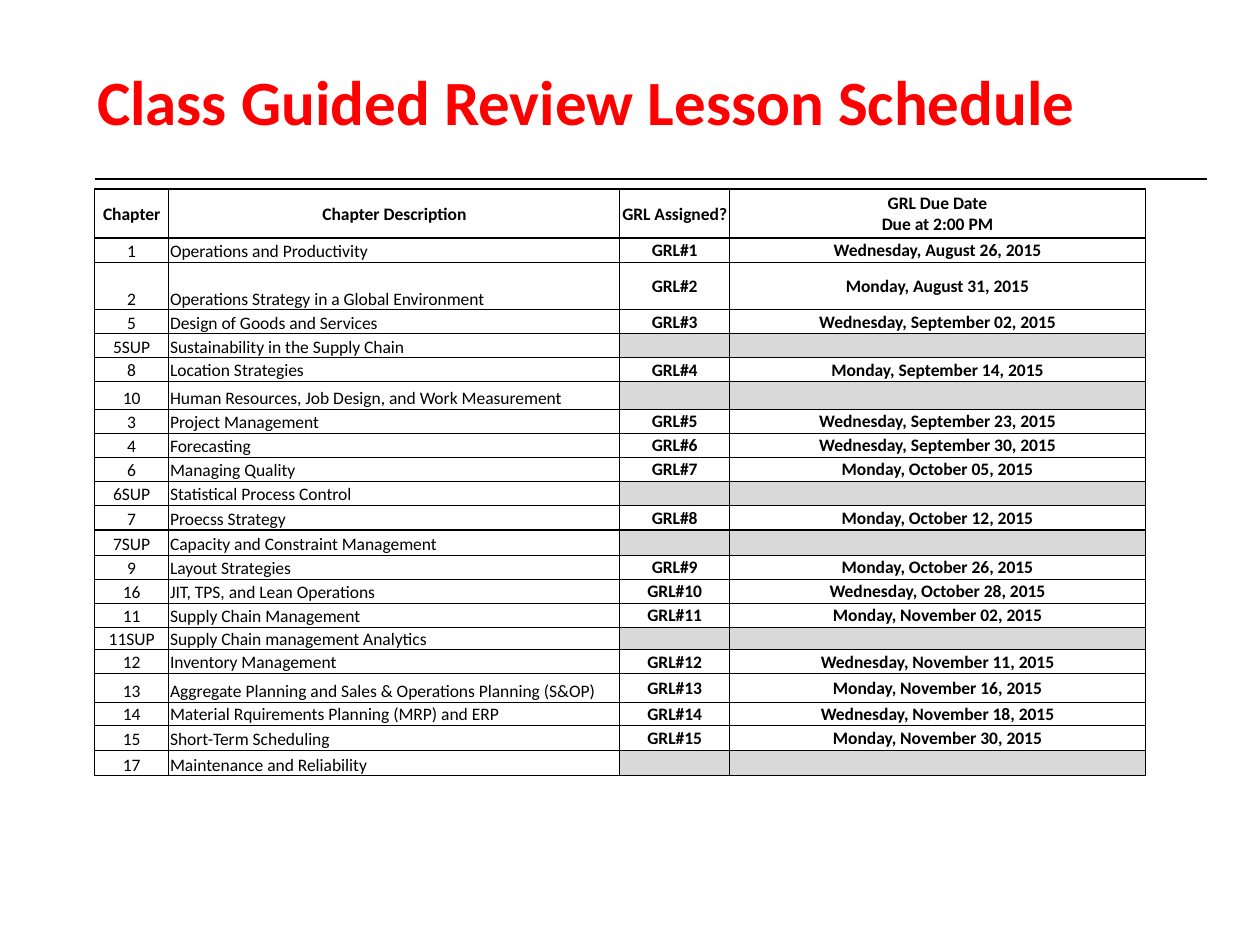
from lxml.etree import SubElement
from pptx import Presentation
from pptx.dml.color import RGBColor
from pptx.enum.shapes import MSO_CONNECTOR
from pptx.enum.text import MSO_ANCHOR, MSO_AUTO_SIZE, PP_ALIGN
from pptx.oxml import parse_xml
from pptx.oxml.ns import nsdecls, qn
from pptx.util import Inches, Pt

RED = RGBColor(0xFF, 0x00, 0x00)
BLACK = RGBColor(0x00, 0x00, 0x00)
GREY = RGBColor(0xD9, 0xD9, 0xD9)
FONT = "Calibri"
THIN, THICK = Pt(0.5), Pt(1)

MARGIN = 0.75
COLUMN_WIDTHS = [0.59, 3.58, 0.87, 3.3]
HEADINGS = ["Chapter", "Chapter Description", "GRL Assigned?",
            "GRL Due Date\vDue at 2:00 PM"]
HEADING_HEIGHT, ROW_HEIGHT = 0.39, 0.19

# Chapter, description, due date (None when no lesson is assigned)
CHAPTERS = [
    ("1", "Operations and Productivity", "Wednesday, August 26, 2015"),
    ("2", "Operations Strategy in a Global Environment", "Monday, August 31, 2015"),
    ("5", "Design of Goods and Services", "Wednesday, September 02, 2015"),
    ("5SUP", "Sustainability in the Supply Chain", None),
    ("8", "Location Strategies", "Monday, September 14, 2015"),
    ("10", "Human Resources, Job Design, and Work Measurement", None),
    ("3", "Project Management", "Wednesday, September 23, 2015"),
    ("4", "Forecasting", "Wednesday, September 30, 2015"),
    ("6", "Managing Quality", "Monday, October 05, 2015"),
    ("6SUP", "Statistical Process Control", None),
    ("7", "Proecss Strategy", "Monday, October 12, 2015"),
    ("7SUP", "Capacity and Constraint Management", None),
    ("9", "Layout Strategies", "Monday, October 26, 2015"),
    ("16", "JIT, TPS, and Lean Operations", "Wednesday, October 28, 2015"),
    ("11", "Supply Chain Management", "Monday, November 02, 2015"),
    ("11SUP", "Supply Chain management Analytics", None),
    ("12", "Inventory Management", "Wednesday, November 11, 2015"),
    ("13", "Aggregate Planning and Sales & Operations Planning (S&OP)",
     "Monday, November 16, 2015"),
    ("14", "Material Rquirements Planning (MRP) and ERP",
     "Wednesday, November 18, 2015"),
    ("15", "Short-Term Scheduling", "Monday, November 30, 2015"),
    ("17", "Maintenance and Reliability", None),
]
SPECIAL_HEIGHTS = {"2": 0.38, "10": 0.22, "7": 0.2, "7SUP": 0.2, "11SUP": 0.18,
                   "13": 0.23, "14": 0.18, "15": 0.2, "17": 0.2}
BLOCK_ENDS = {"10", "7", "11SUP", "17"}  # a thicker rule closes each block


def add_title(slide, left, top, width, height):
    title = slide.shapes.title
    title.left, title.top = Inches(left), Inches(top)
    title.width, title.height = Inches(width), Inches(height)
    frame = title.text_frame
    frame.text = "Class Guided Review Lesson Schedule"
    frame.auto_size = MSO_AUTO_SIZE.NONE
    frame.vertical_anchor = MSO_ANCHOR.BOTTOM
    heading = frame.paragraphs[0]
    heading.alignment = PP_ALIGN.LEFT
    heading.line_spacing = 0.8
    heading.font.name, heading.font.size = FONT, Pt(36)
    heading.font.bold = True
    heading.font.color.rgb = RED


def add_rule(slide, left, right, y):
    rule = slide.shapes.add_connector(
        MSO_CONNECTOR.STRAIGHT, Inches(left), Inches(y), Inches(right), Inches(y))
    rule.line.color.rgb = BLACK
    rule.line.width = Pt(0.75)
    SubElement(rule._element.spPr, qn("a:effectLst"))


def set_borders(cell, left, top, right, bottom):
    properties = cell._tc.get_or_add_tcPr()
    sides = zip(("lnL", "lnR", "lnT", "lnB"), (left, right, top, bottom))
    for position, (side, width) in enumerate(sides):
        properties.insert(position, parse_xml(
            f'<a:{side} {nsdecls("a")} w="{width}"><a:solidFill>'
            f'<a:srgbClr val="{BLACK}"/></a:solidFill></a:{side}>'))


def fill_cell(cell, text, bold, alignment, anchor):
    cell.margin_left = cell.margin_right = cell.margin_top = Inches(0.01)
    cell.margin_bottom = 0
    cell.vertical_anchor = anchor
    entry = cell.text_frame.paragraphs[0]
    if text is None:
        cell.fill.solid()
        cell.fill.fore_color.rgb = GREY
        # The end mark keeps an empty row as low as the others
        entry._p.get_or_add_endParaRPr().set("sz", "1000")
        return
    cell.fill.background()
    entry.text = text
    entry.alignment = alignment
    entry.font.name, entry.font.size = FONT, Pt(10)
    entry.font.bold = bold
    entry.font.color.rgb = BLACK


def schedule_rows():
    """Number the lessons in order of the chapters that have a due date."""
    lesson = 0
    for chapter, description, due in CHAPTERS:
        lesson += due is not None
        yield [chapter, description, f"GRL#{lesson}" if due else None, due]


def add_schedule(slide, left, top):
    heights = [HEADING_HEIGHT] + [SPECIAL_HEIGHTS.get(chapter, ROW_HEIGHT)
                                  for chapter, *_ in CHAPTERS]
    rows = [HEADINGS, *schedule_rows()]
    table = slide.shapes.add_table(
        len(rows), len(COLUMN_WIDTHS), Inches(left), Inches(top),
        Inches(sum(COLUMN_WIDTHS)), Inches(sum(heights))).table
    table.first_row = table.horz_banding = False
    for column, width in zip(table.columns, COLUMN_WIDTHS):
        column.width = Inches(width)

    above = THICK
    for r, (values, height) in enumerate(zip(rows, heights)):
        table.rows[r].height = Inches(height)
        is_heading = r == 0
        below = THICK if is_heading or values[0] in BLOCK_ENDS else THIN
        for c, value in enumerate(values):
            strong = is_heading or c >= 2
            listed = c == 1 and not is_heading
            cell = table.cell(r, c)
            fill_cell(cell, value, strong,
                      PP_ALIGN.LEFT if listed else PP_ALIGN.CENTER,
                      MSO_ANCHOR.MIDDLE if strong else MSO_ANCHOR.BOTTOM)
            set_borders(cell, THICK if c == 0 else THIN, above, THIN, below)
        above = below


def main():
    deck = Presentation()
    deck.slide_width, deck.slide_height = Inches(10), Inches(7.5)
    slide = deck.slides.add_slide(deck.slide_layouts[5])
    add_title(slide, 0.67, 0.47, 8.5, 0.67)
    add_rule(slide, MARGIN, 9.58, 1.42)
    add_schedule(slide, MARGIN, 1.5)
    deck.save("out.pptx")


if __name__ == "__main__":
    main()
